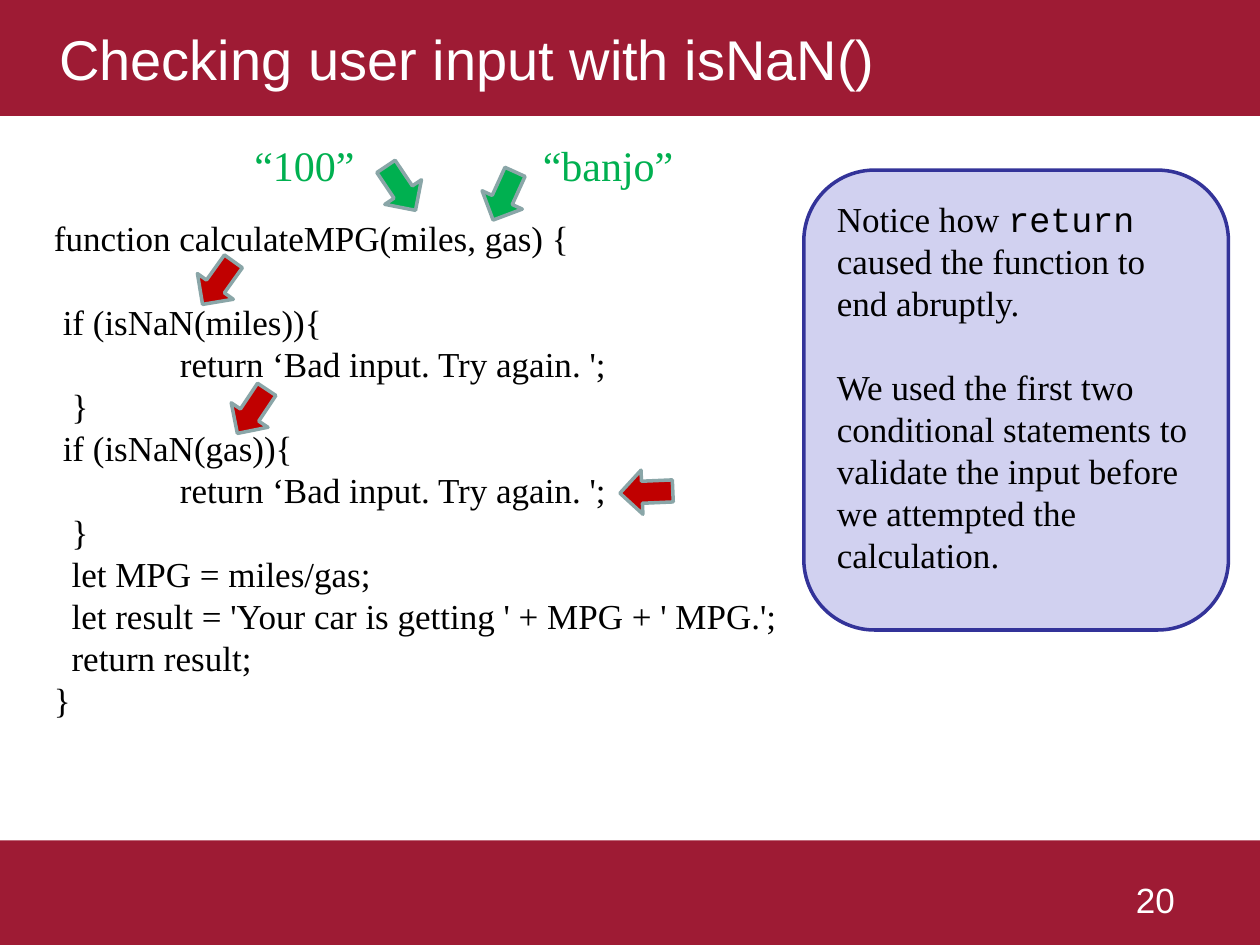
from pptx import Presentation, util as u
from pptx.dml.color import RGBColor
from pptx.enum import shapes as sh, text as tx

PX = 9144
HUE = {"band": "9E1B34", "white": "FFFFFF", "black": "000000",
       "green": "00B050", "red": "C00000", "edge": "8AA6A8",
       "note": "D1D1F0", "rim": "333399"}
SERIF, SANS, MONO = "Times New Roman", "Arial", "Courier New"
CODE = [
    (0, 0, "function calculateMPG(miles, gas) {"),
    (7, 24, "if (isNaN(miles)){"),
    (100, 0, "return ‘Bad input. Try again. ';"),
    (14, 0, "}"),
    (7, 0, "if (isNaN(gas)){"),
    (100, 0, "return ‘Bad input. Try again. ';"),
    (14, 0, "}"),
    (14, 0, "let MPG = miles/gas;"),
    (14, 0, "let result = 'Your car is getting ' + MPG + ' MPG.';"),
    (14, 0, "return result;"),
    (0, 0, "}"),
]
NOTE = [
    (0, [("Notice how ", SERIF), ("return", MONO),
         (" caused the function to end abruptly.", SERIF)]),
    (24, [("We used the first two conditional statements to validate "
           "the input before we attempted the calculation.", SERIF)]),
]


def px(*nums):
    return [u.Emu(n * PX) for n in nums]


def rgb(name):
    return RGBColor.from_string(HUE[name])


def put(item, form):
    for key, val in form.items():
        setattr(item, key, val)


def paint(shape, fill, line=None):
    shape.shadow.inherit = False
    shape.fill.solid()
    shape.fill.fore_color.rgb = rgb(fill)
    if line:
        shape.line.color.rgb = rgb(line)
        shape.line.width = u.Pt(2)
    else:
        shape.line.fill.background()


def write(para, words, size, hue, font=SERIF):
    run = para.add_run()
    run.text = words
    put(run.font, {"size": u.Pt(size), "name": font})
    run.font.color.rgb = rgb(hue)


def indent(para, left):
    prop = para._p.get_or_add_pPr()
    prop.set("marL", str(left * PX))
    prop.set("indent", "0")


def lines(frame, count):
    return [frame.paragraphs[0]] + [frame.add_paragraph() for _ in range(count - 1)]


def label(page, box, words, size, hue, font=SERIF):
    frame = page.shapes.add_textbox(*px(*box)).text_frame
    frame.word_wrap = True
    write(frame.paragraphs[0], words, size, hue, font)
    return frame.paragraphs[0]


def arrow(page, left, top, turn, hue):
    shape = page.shapes.add_shape(sh.MSO_SHAPE.RIGHT_ARROW, *px(left, top, 42, 35))
    shape.rotation = turn
    paint(shape, hue, "edge")


def header(page, box):
    title = page.shapes.title
    put(title, dict(zip(("left", "top", "width", "height"), px(*box))))
    title.fill.solid()
    title.fill.fore_color.rgb = rgb("band")
    put(title.text_frame, {"vertical_anchor": tx.MSO_ANCHOR.MIDDLE,
                           "auto_size": tx.MSO_AUTO_SIZE.NONE})
    para = title.text_frame.paragraphs[0]
    para.alignment = tx.PP_ALIGN.LEFT
    indent(para, 37)
    write(para, "Checking user input with isNaN()", 32, "white", SANS)


def footer(page, box):
    left, top, wide, _ = box
    band = page.shapes.add_shape(sh.MSO_SHAPE.RECTANGLE, *px(*box))
    paint(band, "band")
    para = label(page, (left + wide - 283, top + 25, 233, 33), "20 ", 20, "white", SANS)
    para.alignment = tx.PP_ALIGN.RIGHT


def inputs(page, box):
    left, top, _, high = box
    label(page, (left, top, 111, high), "“100”", 24, "green")
    label(page, (left + 229, top, 140, high), "“banjo”", 24, "green")
    arrow(page, left + 105, top + 26, 56.1, "green")
    arrow(page, left + 187, top + 32, 114.5, "green")


def code(page, box):
    left, top, _, _ = box
    frame = page.shapes.add_textbox(*px(*box)).text_frame
    frame.word_wrap = True
    for para, (shift, gap, words) in zip(lines(frame, len(CODE)), CODE):
        put(para, {"line_spacing": u.Pt(24), "space_before": u.Pt(gap)})
        indent(para, shift)
        write(para, words, 20, "black")
    for right, down, turn in ((119, 40, 125.6), (146, 142, 123.7), (459, 206, 177.5)):
        arrow(page, left + right, top + down, turn, "red")


def note(page, box):
    card = page.shapes.add_shape(sh.MSO_SHAPE.ROUNDED_RECTANGLE, *px(*box))
    paint(card, "note", "rim")
    frame = card.text_frame
    put(frame, {"word_wrap": True, "vertical_anchor": tx.MSO_ANCHOR.TOP})
    for para, (gap, parts) in zip(lines(frame, len(NOTE)), NOTE):
        put(para, {"alignment": tx.PP_ALIGN.LEFT, "line_spacing": u.Pt(24),
                   "space_before": u.Pt(gap)})
        for words, font in parts:
            write(para, words, 20, "black", font)


def main():
    deck = Presentation()
    put(deck, dict(zip(("slide_width", "slide_height"), px(1000, 750))))
    page = deck.slides.add_slide(deck.slide_layouts[5])
    header(page, (0, 0, 1000, 92))
    footer(page, (0, 667, 1000, 83))
    code(page, (33, 167, 683, 414))
    inputs(page, (192, 106, 369, 50))
    note(page, (638, 135, 337, 365))
    deck.save("out.pptx")


if __name__ == "__main__":
    main()
